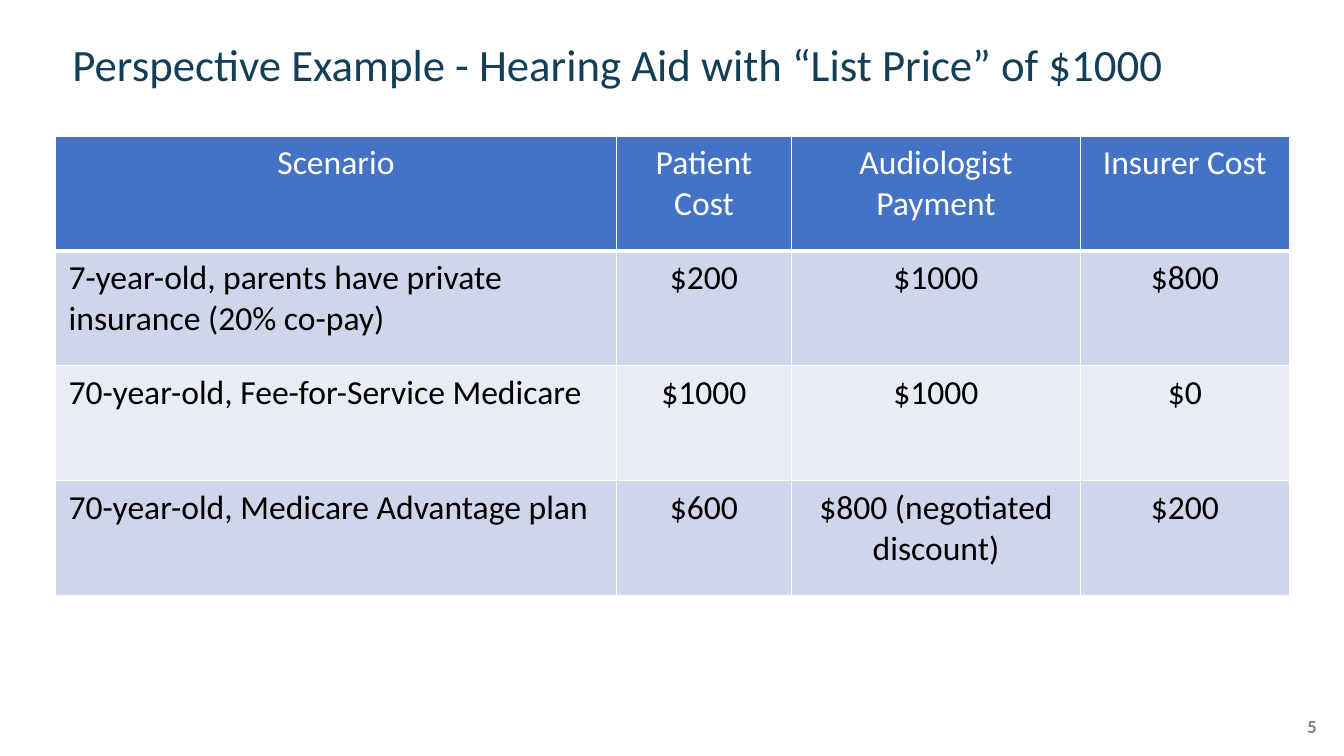
"""Build a slide that compares hearing aid costs across insurance scenarios."""
from lxml import etree
from pptx import Presentation
from pptx import util as u
from pptx.dml.color import RGBColor
from pptx.enum import text
from pptx.oxml import ns

PX = 9525
FONT = "Calibri"
NAVY = RGBColor(0x12, 0x3E, 0x57)
BLUE = RGBColor(0x44, 0x72, 0xC4)
BAND_DARK = RGBColor(0xCF, 0xD5, 0xEA)
BAND_LIGHT = RGBColor(0xE9, 0xEB, 0xF5)
WHITE = RGBColor(0xFF, 0xFF, 0xFF)
BLACK = RGBColor(0, 0, 0)
GRAY = RGBColor(0x7F, 0x7F, 0x7F)

COLUMN_WIDTHS = [534, 167, 275, 199]
ROW_HEIGHT = 109.5
ROWS = [
    ["Scenario", "Patient Cost", "Audiologist Payment", "Insurer Cost"],
    ["7-year-old, parents have private insurance (20% co-pay)", "$200", "$1000", "$800"],
    ["70-year-old, Fee-for-Service Medicare", "$1000", "$1000", "$0"],
    ["70-year-old, Medicare Advantage plan", "$600", "$800 (negotiated discount)", "$200"],
]


def px(*lengths):
    return [u.Emu(round(length * PX)) for length in lengths]


def write(tf, content, size, color, align, bold=False):
    tf.text = content
    p = tf.paragraphs[0]
    p.alignment = align
    font = p.runs[0].font
    font.name, font.size, font.bold = FONT, u.Pt(size), bold
    font.color.rgb = color
    return p


def clear_margins(tf):
    tf.margin_left = tf.margin_right = tf.margin_top = tf.margin_bottom = 0
    tf.word_wrap = True


def add_title(s, content):
    title = s.shapes.title
    title.left, title.top, title.width, title.height = px(69, 43, 1143, 44)
    tf = title.text_frame
    clear_margins(tf)
    tf.auto_size = text.MSO_AUTO_SIZE.NONE
    tf.vertical_anchor = text.MSO_ANCHOR.BOTTOM
    p = write(tf, content, 32, NAVY, text.PP_ALIGN.LEFT)
    p.line_spacing = 0.9


def add_page_number(s, number):
    tf = s.shapes.add_textbox(*px(1211, 681, 43, 26)).text_frame
    clear_margins(tf)
    write(tf, number, 13.3, GRAY, text.PP_ALIGN.RIGHT, bold=True)


def set_borders(cell, bottom):
    tc_pr = cell._tc.get_or_add_tcPr()
    for side, width in (("L", 1), ("R", 1), ("T", 1), ("B", bottom)):
        line = etree.SubElement(tc_pr, ns.qn(f"a:ln{side}"), w=str(u.Pt(width)))
        fill = etree.SubElement(line, ns.qn("a:solidFill"))
        etree.SubElement(fill, ns.qn("a:srgbClr"), val=str(WHITE))


def fill_cell(cell, content, row, column):
    header = row == 0
    left = column == 0 and not header
    cell.margin_left, cell.margin_right, cell.margin_top, cell.margin_bottom = px(12.5, 12.5, 6.5, 6.5)
    set_borders(cell, 3 if header else 1)
    cell.fill.solid()
    cell.fill.fore_color.rgb = BLUE if header else (BAND_LIGHT, BAND_DARK)[row % 2]
    align = text.PP_ALIGN.LEFT if left else text.PP_ALIGN.CENTER
    write(cell.text_frame, content, 24, WHITE if header else BLACK, align)


def add_cost_table(s):
    frame = px(53, 129.5, sum(COLUMN_WIDTHS), ROW_HEIGHT * len(ROWS))
    table = s.shapes.add_table(len(ROWS), len(COLUMN_WIDTHS), *frame).table
    for column, width in zip(table.columns, px(*COLUMN_WIDTHS)):
        column.width = width
    for i, row in enumerate(ROWS):
        table.rows[i].height = px(ROW_HEIGHT)[0]
        for j, content in enumerate(row):
            fill_cell(table.cell(i, j), content, i, j)


def main():
    prs = Presentation()
    prs.slide_width, prs.slide_height = px(1280, 720)
    s = prs.slides.add_slide(prs.slide_layouts[5])
    add_page_number(s, "5")
    add_title(s, "Perspective Example - Hearing Aid with “List Price” of $1000")
    add_cost_table(s)
    prs.save("out.pptx")


if __name__ == "__main__":
    main()
